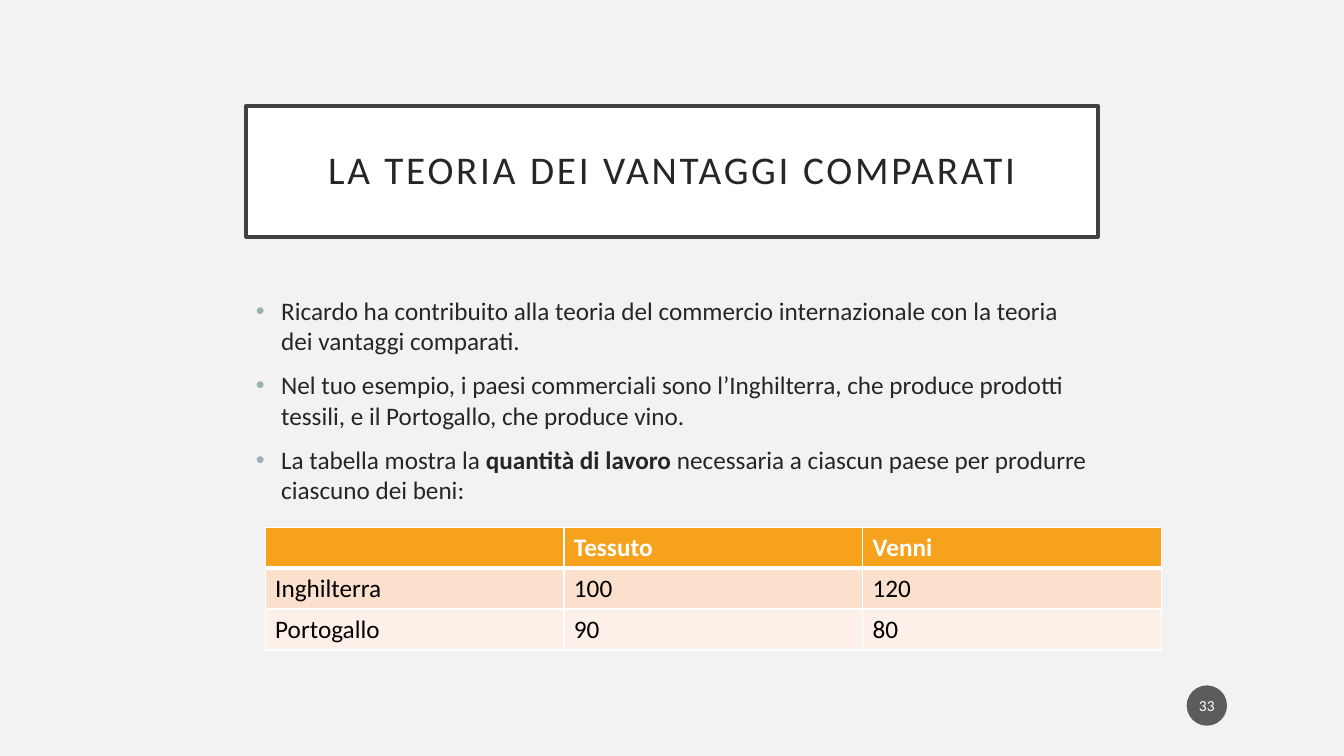
from lxml.etree import SubElement
from pptx import Presentation
from pptx.dml.color import RGBColor
from pptx.enum.shapes import MSO_SHAPE
from pptx.enum.text import MSO_ANCHOR, PP_ALIGN
from pptx.oxml import parse_xml
from pptx.oxml.ns import nsdecls, qn
from pptx.util import Inches, Pt

FONT = "Calibri"
BACKGROUND = RGBColor(0xF2, 0xF2, 0xF2)
WHITE = RGBColor(0xFF, 0xFF, 0xFF)
BLACK = RGBColor(0x00, 0x00, 0x00)
FRAME = RGBColor(0x40, 0x40, 0x40)
INK = RGBColor(0x26, 0x26, 0x26)
BULLET = RGBColor(0x9B, 0xAF, 0xB5)
BADGE = RGBColor(0x1D, 0x1D, 0x1D)
ORANGE = RGBColor(0xF6, 0xA2, 0x1D)
PEACH = RGBColor(0xFB, 0xE0, 0xCD)
CREAM = RGBColor(0xFD, 0xF0, 0xE8)

# Each point is a list of (text, bold) runs.
POINTS = [
    [("Ricardo ha contribuito alla teoria del commercio internazionale "
      "con la teoria dei vantaggi comparati.", False)],
    [("Nel tuo esempio, i paesi commerciali sono l’Inghilterra, che produce "
      "prodotti tessili, e il Portogallo, che produce vino.", False)],
    [("La tabella mostra la ", False),
     ("quantità di lavoro ", True),
     ("necessaria a ciascun paese per produrre ciascuno dei beni:", False)],
]
LABOUR = [
    ("", "Tessuto", "Venni"),
    ("Inghilterra", "100", "120"),
    ("Portogallo", "90", "80"),
]
ROW_FILLS = [ORANGE, PEACH, CREAM]


def style(paragraph, size, color, bold=None):
    font = paragraph.font
    font.name, font.size, font.bold = FONT, Pt(size), bold
    font.color.rgb = color


def add_centred_shape(slide, kind, box, fill, text, size, color, inset):
    shape = slide.shapes.add_shape(kind, *map(Inches, box))
    shape.shadow.inherit = False
    shape.fill.solid()
    shape.fill.fore_color.rgb = fill
    frame = shape.text_frame
    frame.word_wrap = True
    frame.vertical_anchor = MSO_ANCHOR.MIDDLE
    frame.margin_left = frame.margin_right = Inches(inset)
    paragraph = frame.paragraphs[0]
    paragraph.alignment = PP_ALIGN.CENTER
    paragraph.add_run().text = text
    style(paragraph, size, color)
    return shape


def add_title(slide):
    title = add_centred_shape(
        slide, MSO_SHAPE.RECTANGLE, (2.44, 1.05, 8.45, 1.3), WHITE,
        "LA TEORIA DEI VANTAGGI COMPARATI", 28, INK, 0.2)
    title.line.color.rgb = FRAME
    title.line.width = Pt(2.5)
    paragraph = title.text_frame.paragraphs[0]
    paragraph.line_spacing = 0.9
    paragraph.runs[0].font._element.set("spc", "200")


def add_page_number(slide):
    badge = add_centred_shape(
        slide, MSO_SHAPE.OVAL, (11.77, 6.8, 0.4, 0.4), BADGE,
        "33", 11, WHITE, 0.02)
    badge.line.fill.background()
    color = badge.fill._xPr.find(qn("a:solidFill"))[0]
    SubElement(color, qn("a:alpha"), val="70000")


def add_bullet(paragraph):
    properties = paragraph._p.get_or_add_pPr()
    properties.set("marL", str(Inches(0.25)))
    properties.set("indent", str(Inches(-0.25)))
    bullet = (
        f'<a:buClr {nsdecls("a")}><a:srgbClr val="{BULLET}"/></a:buClr>',
        f'<a:buFont {nsdecls("a")} typeface="Arial"/>',
        f'<a:buChar {nsdecls("a")} char="•"/>',
    )
    default_font = properties.find(qn("a:defRPr"))
    for xml in bullet:
        default_font.addprevious(parse_xml(xml))


def add_points(slide):
    box = slide.shapes.add_textbox(*map(Inches, (2.44, 2.88, 8.45, 3.39)))
    frame = box.text_frame
    frame.word_wrap = True
    for index, runs in enumerate(POINTS):
        paragraph = frame.add_paragraph() if index else frame.paragraphs[0]
        paragraph.space_before = Pt(10)
        style(paragraph, 18, INK)
        add_bullet(paragraph)
        for text, bold in runs:
            run = paragraph.add_run()
            run.text = text
            if bold:
                run.font.bold = True


def add_borders(cell, bottom_width):
    """Draw white edges, inserted ahead of the cell's fill as the schema asks."""
    properties = cell._tc.get_or_add_tcPr()
    widths = {"lnL": 1, "lnR": 1, "lnT": 1, "lnB": bottom_width}
    for position, (side, width) in enumerate(widths.items()):
        properties.insert(position, parse_xml(
            f'<a:{side} {nsdecls("a")} w="{Pt(width)}"><a:solidFill>'
            f'<a:srgbClr val="{WHITE}"/></a:solidFill></a:{side}>'))


def add_labour_table(slide):
    table = slide.shapes.add_table(
        len(LABOUR), len(LABOUR[0]),
        *map(Inches, (2.63, 5.23, 8.89, 1.22))).table
    for r, (values, fill) in enumerate(zip(LABOUR, ROW_FILLS)):
        header = r == 0
        for c, value in enumerate(values):
            cell = table.cell(r, c)
            cell.text = value
            cell.fill.solid()
            cell.fill.fore_color.rgb = fill
            style(cell.text_frame.paragraphs[0], 18,
                  WHITE if header else BLACK, header)
            add_borders(cell, 3 if header else 1)
            if r == 1:
                cell._tc.tcPr.find(qn("a:lnT")).set("w", str(Pt(3)))


def main():
    presentation = Presentation()
    presentation.slide_width = Inches(13.33)
    presentation.slide_height = Inches(7.5)
    slide = presentation.slides.add_slide(presentation.slide_layouts[6])
    slide.background.fill.solid()
    slide.background.fill.fore_color.rgb = BACKGROUND
    add_title(slide)
    add_points(slide)
    add_page_number(slide)
    add_labour_table(slide)
    presentation.save("out.pptx")


if __name__ == "__main__":
    main()
